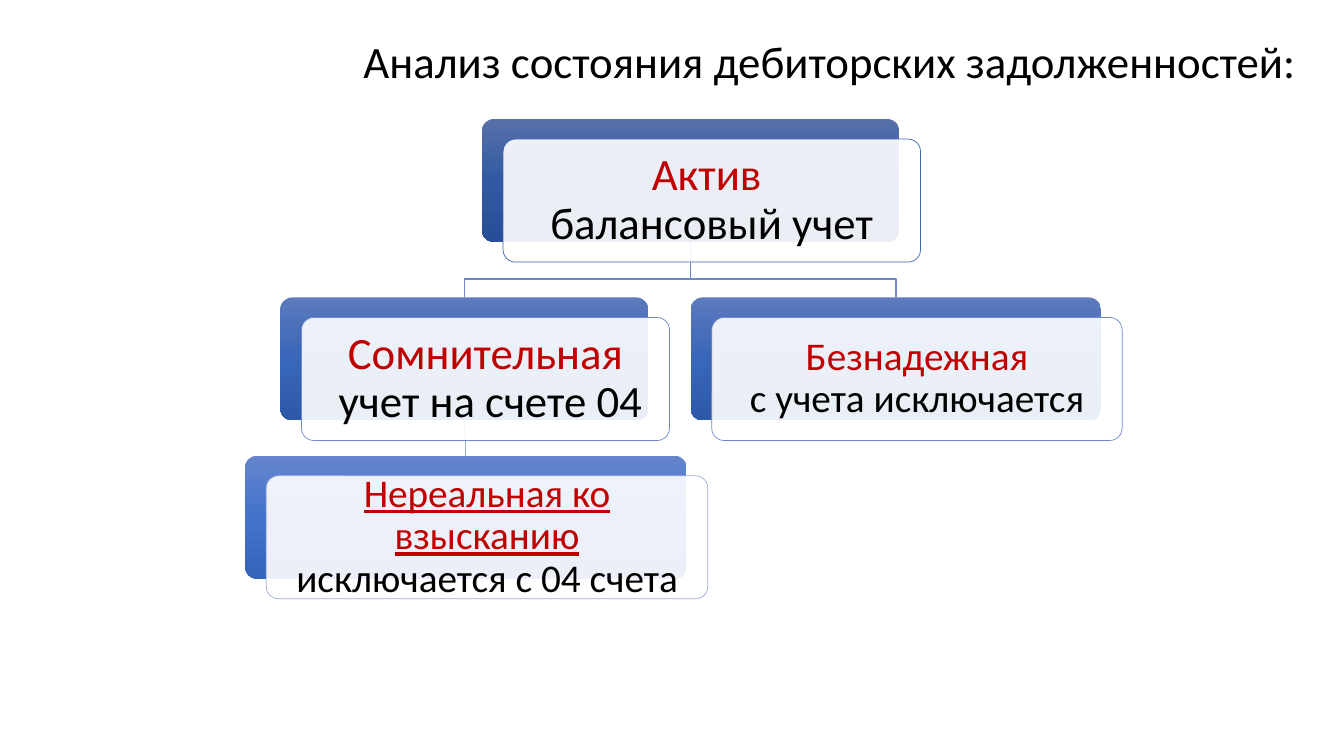
"""Build a slide with a hierarchy of receivables."""
import copy

import lxml.etree
import pptx
import pptx.dml.color
import pptx.enum.shapes
import pptx.enum.text
import pptx.oxml.ns
import pptx.util
from pptx.util import Inches

COLOURS = {"text": "000000", "accent": "C00000", "card": "FFFFFF"}
LEVELS = [
    {"stops": ("5870A9", "315AA2", "274F95"), "outline": "3E67B2", "top": 1.18},
    {"stops": ("5C7ABD", "3866B8", "2D59A8"), "outline": "6D89CB", "top": 2.95},
    {"stops": ("6585CC", "4373CB", "3564BB"), "outline": "9EADD8", "top": 4.52},
]
NODES = {
    "asset": {"level": 0, "left": 4.78, "width": 4.14, "size": 32,
              "heading": "Актив ", "detail": "балансовый учет"},
    "doubtful": {"level": 1, "left": 2.78, "width": 3.65, "size": 32,
                 "heading": "Сомнительная", "detail": " учет на счете 04"},
    "unreal": {"level": 2, "left": 2.43, "width": 4.38, "size": 28, "underline": True,
               "heading": "Нереальная ко взысканию", "detail": "исключается с 04 счета"},
    "hopeless": {"level": 1, "left": 6.85, "width": 4.07, "size": 28,
                 "heading": "Безнадежная", "detail": "с учета исключается"},
}
BRANCHES = [("asset", "hopeless"), ("doubtful", "unreal"), ("asset", "doubtful")]
NODE_HEIGHT = 1.22
CARD_SHIFT = (0.21, 0.2)
BEND = 0.18


def rgb(value):
    """Return a colour from a hex string."""
    return pptx.dml.color.RGBColor.from_string(value)


def apply(target, values):
    """Set attributes of an object from a dict."""
    for name, value in values.items():
        setattr(target, name, value)


def add_span(para, text, size, colour, underline=False):
    """Add one formatted run to a paragraph."""
    span = para.add_run()
    span.text = text
    apply(span.font, {"name": "Calibri", "size": pptx.util.Pt(size), "underline": underline})
    span.font.color.rgb = rgb(colour)


def format_frame(frame, align, inset):
    """Set up a text frame and return its first paragraph."""
    apply(frame, {
        "word_wrap": True,
        "auto_size": pptx.enum.text.MSO_AUTO_SIZE.NONE,
        "vertical_anchor": pptx.enum.text.MSO_ANCHOR.MIDDLE,
        "margin_left": Inches(inset), "margin_right": Inches(inset),
        "margin_top": Inches(inset), "margin_bottom": Inches(inset),
    })
    para = frame.paragraphs[0]
    apply(para, {"alignment": align, "line_spacing": 0.9})
    return para


def add_title(page, text):
    """Add the right-aligned title."""
    box = page.shapes.add_textbox(Inches(0.88), Inches(0.33), Inches(12.08), Inches(0.61))
    para = format_frame(box.text_frame, pptx.enum.text.PP_ALIGN.RIGHT, 0.1)
    add_span(para, text, 32, COLOURS["text"])


def add_rounded(page, left, top, width):
    """Add a rounded rectangle of the common height."""
    shape = page.shapes.add_shape(
        pptx.enum.shapes.MSO_SHAPE.ROUNDED_RECTANGLE,
        Inches(left), Inches(top), Inches(width), Inches(NODE_HEIGHT))
    shape.adjustments[0] = 0.1
    shape.shadow.inherit = False
    return shape


def fill_gradient(shape, colours):
    """Fill a shape from top to bottom with evenly spaced colours."""
    shape.fill.gradient()
    shape.fill.gradient_angle = 270
    stop_list = shape._element.spPr.find(".//" + pptx.oxml.ns.qn("a:gsLst"))
    while len(stop_list) < len(colours):
        stop_list.append(copy.deepcopy(stop_list[0]))
    for index, (stop, colour) in enumerate(zip(shape.fill.gradient_stops, colours)):
        stop.position = index / (len(colours) - 1)
        stop.color.rgb = rgb(colour)


def fill_translucent(shape, colour, percent):
    """Fill a shape with a partly opaque colour."""
    shape.fill.solid()
    shape.fill.fore_color.rgb = rgb(colour)
    tone = shape._element.spPr.find(".//" + pptx.oxml.ns.qn("a:srgbClr"))
    lxml.etree.SubElement(tone, pptx.oxml.ns.qn("a:alpha"), val=str(percent * 1000))


def set_outline(shape, colour, width):
    """Give a shape a solid outline."""
    shape.line.color.rgb = rgb(colour)
    shape.line.width = pptx.util.Pt(width)


def add_node(page, node):
    """Add a gradient backing and its text card."""
    level = LEVELS[node["level"]]
    backing = add_rounded(page, node["left"], level["top"], node["width"])
    fill_gradient(backing, level["stops"])
    backing.line.fill.background()
    card = add_rounded(page, node["left"] + CARD_SHIFT[0],
                       level["top"] + CARD_SHIFT[1], node["width"])
    fill_translucent(card, COLOURS["card"], 90)
    set_outline(card, level["outline"], 0.5)
    para = format_frame(card.text_frame, pptx.enum.text.PP_ALIGN.CENTER, 0.15)
    add_span(para, node["heading"], node["size"], COLOURS["accent"], node.get("underline", False))
    para.add_line_break()
    add_span(para, node["detail"], node["size"], COLOURS["text"])


def add_branch(page, parent, child):
    """Add a bent line from a parent's bottom to a child's top."""
    start, end = (Inches(node["left"] + node["width"] / 2) for node in (parent, child))
    level = LEVELS[child["level"]]
    bottom = Inches(LEVELS[parent["level"]]["top"] + NODE_HEIGHT)
    top, bend = Inches(level["top"]), Inches(level["top"] - BEND)
    builder = page.shapes.build_freeform(start, bottom)
    builder.add_line_segments([(start, bend), (end, bend), (end, top)], close=False)
    branch = builder.convert_to_shape()
    branch.shadow.inherit = False
    branch.fill.background()
    set_outline(branch, level["outline"], 1)


def main():
    """Build and save the deck."""
    deck = pptx.Presentation()
    apply(deck, {"slide_width": Inches(13.33), "slide_height": Inches(7.5)})
    page = deck.slides.add_slide(deck.slide_layouts[6])
    add_title(page, "Анализ состояния дебиторских задолженностей:")
    for parent, child in BRANCHES:
        add_branch(page, NODES[parent], NODES[child])
    for node in NODES.values():
        add_node(page, node)
    deck.save("out.pptx")


if __name__ == "__main__":
    main()
